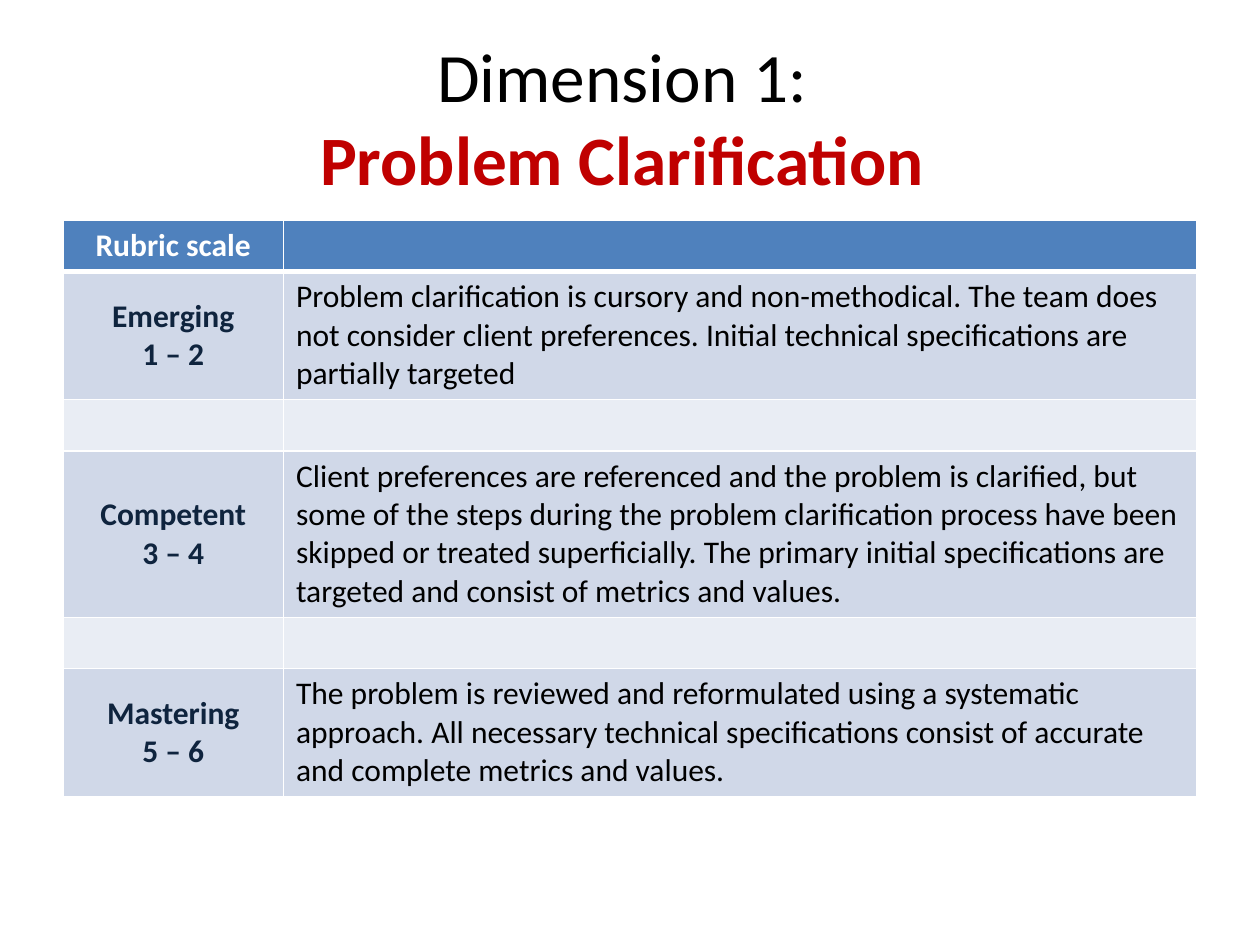
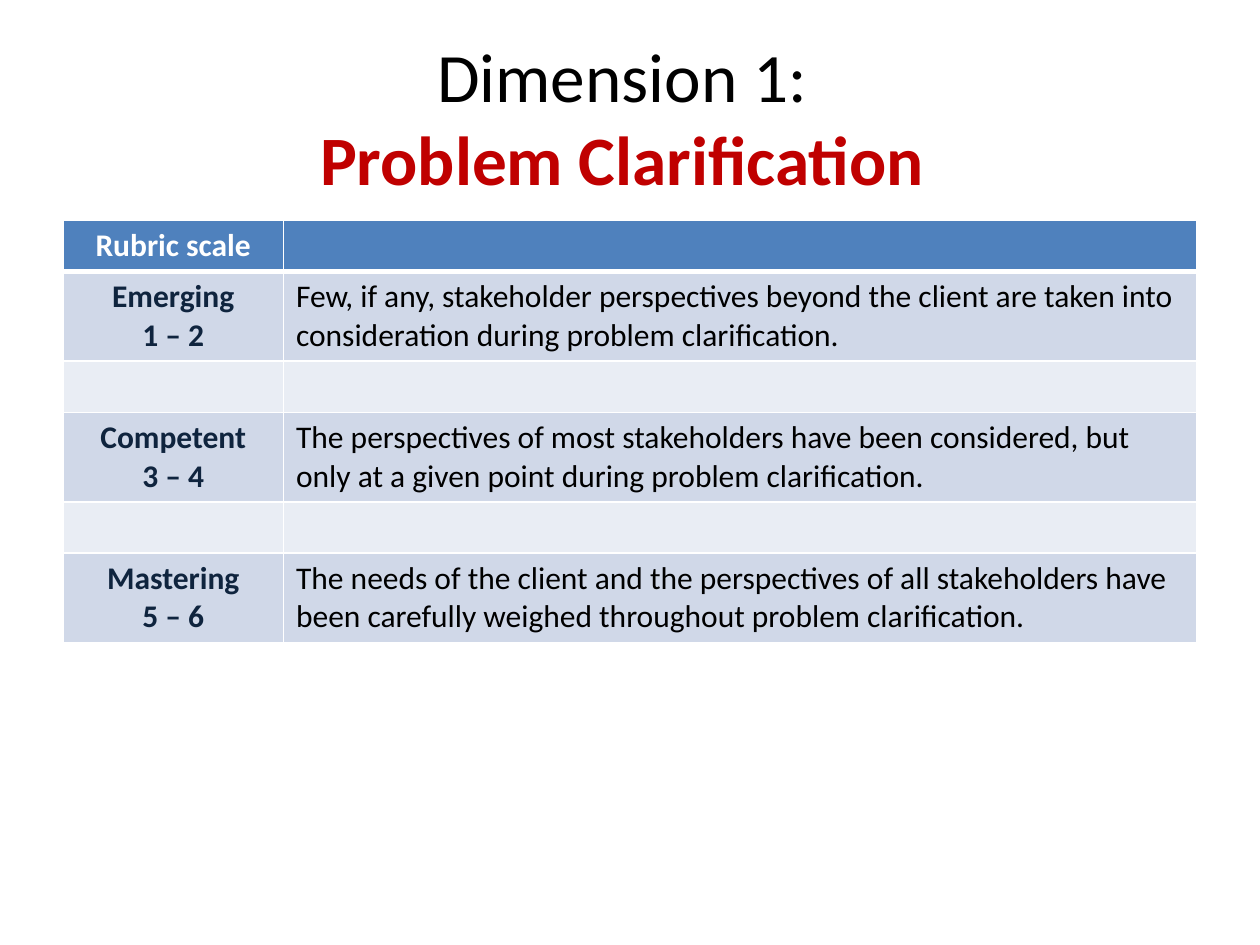
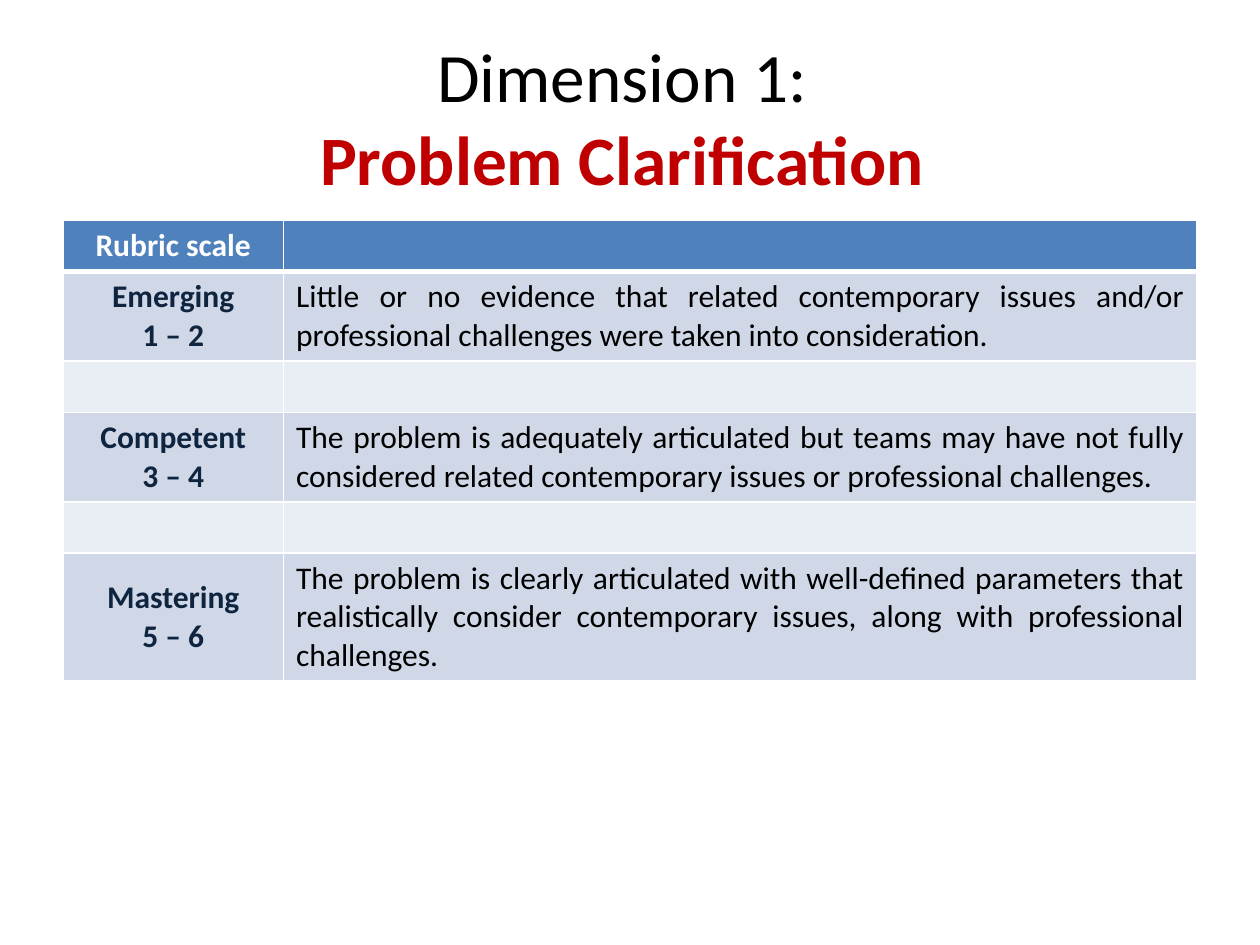
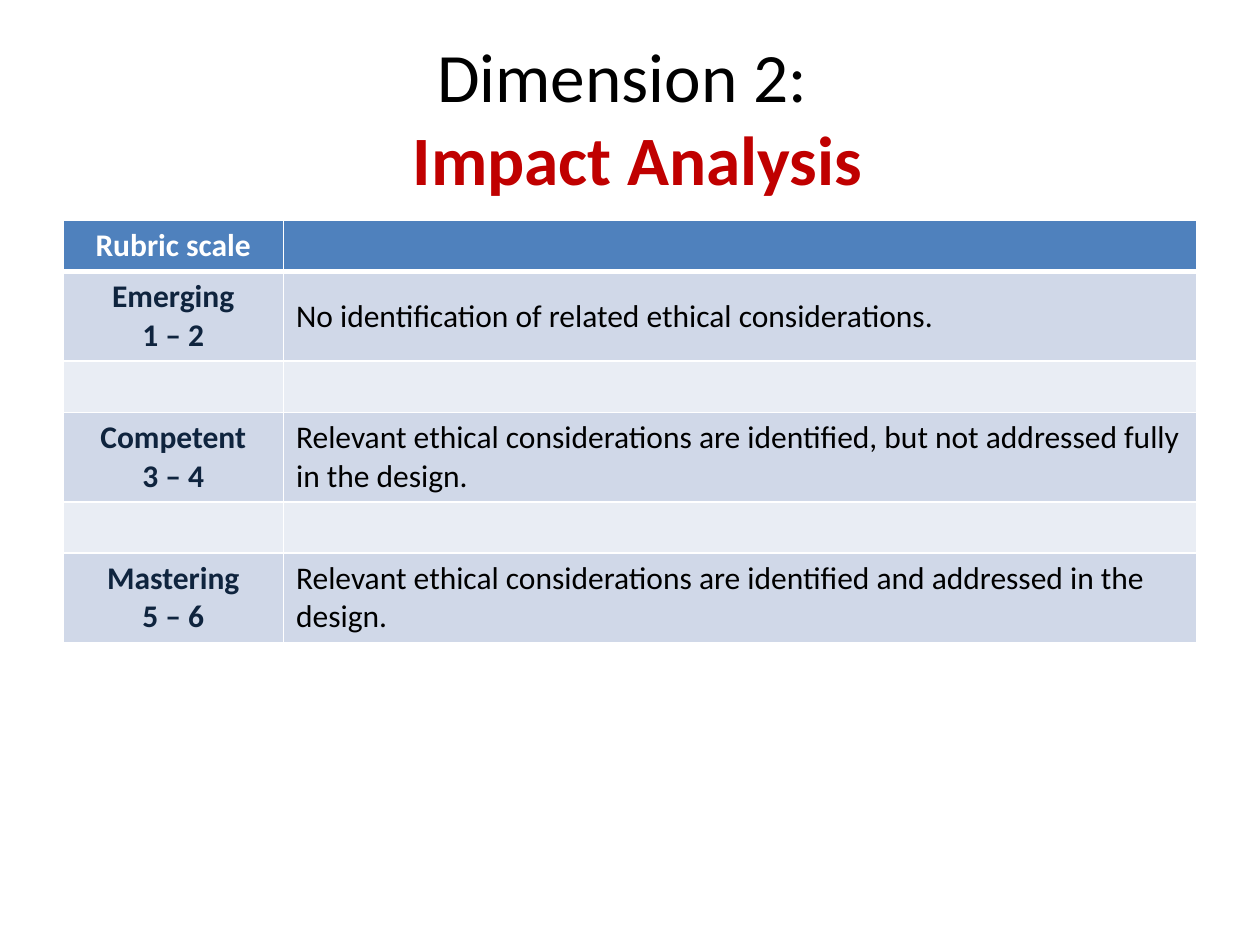
from dataclasses import dataclass

from lxml.etree import SubElement
from pptx import Presentation
from pptx.dml.color import RGBColor
from pptx.enum.text import MSO_ANCHOR as Anchor, PP_ALIGN as Align
from pptx.oxml.ns import qn
from pptx.util import Pt


@dataclass(frozen=True)
class Theme:
    font: str = "Calibri"
    title_size: float = 39.6
    table_size: float = 18
    line_height: float = 22
    cell_padding: float = 7.2
    text: str = "000000"
    accent: str = "C00000"
    label: str = "0F243E"
    white: str = "FFFFFF"
    header_fill: str = "4F81BD"
    level_fill: str = "D0D8E8"
    spacer_fill: str = "E9EDF4"
    border: float = 1
    header_border: float = 3


@dataclass(frozen=True)
class Box:
    left: float
    top: float
    width: float
    height: float = 0

    def lengths(self):
        return Pt(self.left), Pt(self.top), Pt(self.width), Pt(self.height)


@dataclass(frozen=True)
class Rubric:
    """Descriptions follow LEVELS; line_counts gives the text lines of each."""
    dimension: str
    name: str
    descriptions: tuple
    line_counts: tuple = (2, 2, 2)
    align: Align = Align.LEFT
    anchor: Anchor = Anchor.TOP


THEME = Theme()
TITLE_BOX = Box(36, 21.6, 648, 90)
TABLE_BOX = Box(36, 126, 648)
LABEL_WIDTH = 126
LEVELS = ("Emerging\n1 – 2", "Competent\n3 – 4", "Mastering\n5 – 6")

RUBRICS = (
    Rubric(
        "Dimension 1: ", "Problem Clarification ",
        (
            "Problem clarification is cursory and non-methodical. The team does not "
            "consider client preferences. Initial technical specifications are\n"
            "partially targeted",
            "Client preferences are referenced and the problem is clarified, but some "
            "of the steps during the problem clarification process have been skipped "
            "or treated superficially. The primary initial specifications are "
            "targeted and consist of metrics and values.",
            "The problem is reviewed and reformulated using a systematic approach. "
            "All necessary technical specifications consist of accurate and complete "
            "metrics and values.",
        ),
        line_counts=(3, 4, 3),
    ),
    Rubric(
        "Dimension 1: ", "Problem Clarification ",
        (
            "Few, if any, stakeholder perspectives beyond the client are taken into "
            "consideration during problem clarification.",
            "The perspectives of most stakeholders have been considered, but only at "
            "a given point during problem clarification.",
            "The needs of the client and the perspectives of all stakeholders have "
            "been carefully weighed throughout problem clarification.",
        ),
    ),
    Rubric(
        "Dimension 1: ", "Problem Clarification ",
        (
            "Little or no evidence that related contemporary issues and/or "
            "professional challenges were taken into consideration.",
            "The problem is adequately articulated but teams may have not fully "
            "considered related contemporary issues or professional challenges.",
            "The problem is clearly articulated with well-defined parameters that "
            "realistically consider contemporary issues, along with professional "
            "challenges.",
        ),
        line_counts=(2, 2, 3),
        align=Align.JUSTIFY,
    ),
    Rubric(
        "Dimension 2: ", " Impact Analysis",
        (
            "No identification of related ethical considerations.",
            "Relevant ethical considerations are identified, but not addressed fully "
            "in the design.",
            "Relevant ethical considerations are identified and addressed in the "
            "design.",
        ),
        anchor=Anchor.MIDDLE,
    ),
)


def set_font(font, size, color, bold=False):
    font.name = THEME.font
    font.size = Pt(size)
    font.bold = bold
    font.color.rgb = RGBColor.from_string(color)


def add_title(slide, box, rubric):
    frame = slide.shapes.add_textbox(*box.lengths()).text_frame
    frame.word_wrap = True
    frame.vertical_anchor = Anchor.MIDDLE
    paragraph = frame.paragraphs[0]
    paragraph.alignment = Align.CENTER
    dimension = paragraph.add_run()
    dimension.text = rubric.dimension
    set_font(dimension.font, THEME.title_size, THEME.text)
    paragraph.add_line_break()
    name = paragraph.add_run()
    name.text = rubric.name
    set_font(name.font, THEME.title_size, THEME.accent, bold=True)


def style_cell(cell, fill, top=THEME.border, bottom=THEME.border):
    """Give the cell white borders and a fill; borders must precede the fill."""
    properties = cell._tc.get_or_add_tcPr()
    widths = {"L": THEME.border, "R": THEME.border, "T": top, "B": bottom}
    for side, width in widths.items():
        line = SubElement(properties, qn(f"a:ln{side}"), w=str(Pt(width)))
        solid = SubElement(line, qn("a:solidFill"))
        SubElement(solid, qn("a:srgbClr"), val=THEME.white)
    cell.fill.solid()
    cell.fill.fore_color.rgb = RGBColor.from_string(fill)


def write_cell(cell, text, color, bold=False, align=Align.CENTER, anchor=Anchor.TOP):
    cell.text_frame.text = text
    cell.vertical_anchor = anchor
    for paragraph in cell.text_frame.paragraphs:
        paragraph.alignment = align
        set_font(paragraph.font, THEME.table_size, color, bold)


def add_rubric_table(slide, box, rubric):
    """Place a header row, then the level rows with a spacer row between them."""
    line_counts = [1] * (2 * len(LEVELS))
    line_counts[1::2] = rubric.line_counts
    table = slide.shapes.add_table(len(line_counts), 2, *box.lengths()).table
    table.horz_banding = False
    table.columns[0].width = Pt(LABEL_WIDTH)
    table.columns[1].width = Pt(box.width - LABEL_WIDTH)

    for index, count in enumerate(line_counts):
        row = table.rows[index]
        row.height = Pt(count * THEME.line_height + THEME.cell_padding)
        for cell in row.cells:
            if index == 0:
                style_cell(cell, THEME.header_fill, bottom=THEME.header_border)
            elif index == 1:
                style_cell(cell, THEME.level_fill, top=THEME.header_border)
            else:
                style_cell(cell, THEME.level_fill if index % 2 else THEME.spacer_fill)

    write_cell(table.cell(0, 0), "Rubric scale", THEME.white, bold=True)
    for index, (level, description) in enumerate(zip(LEVELS, rubric.descriptions)):
        row_index = 2 * index + 1
        write_cell(table.cell(row_index, 0), level, THEME.label,
                   bold=True, anchor=Anchor.MIDDLE)
        write_cell(table.cell(row_index, 1), description, THEME.text,
                   align=rubric.align, anchor=rubric.anchor)


def main():
    presentation = Presentation()
    presentation.slide_width = Pt(720)
    presentation.slide_height = Pt(540)
    blank_layout = presentation.slide_layouts[6]
    for rubric in RUBRICS:
        slide = presentation.slides.add_slide(blank_layout)
        add_title(slide, TITLE_BOX, rubric)
        add_rubric_table(slide, TABLE_BOX, rubric)
    presentation.save("out.pptx")


if __name__ == "__main__":
    main()
